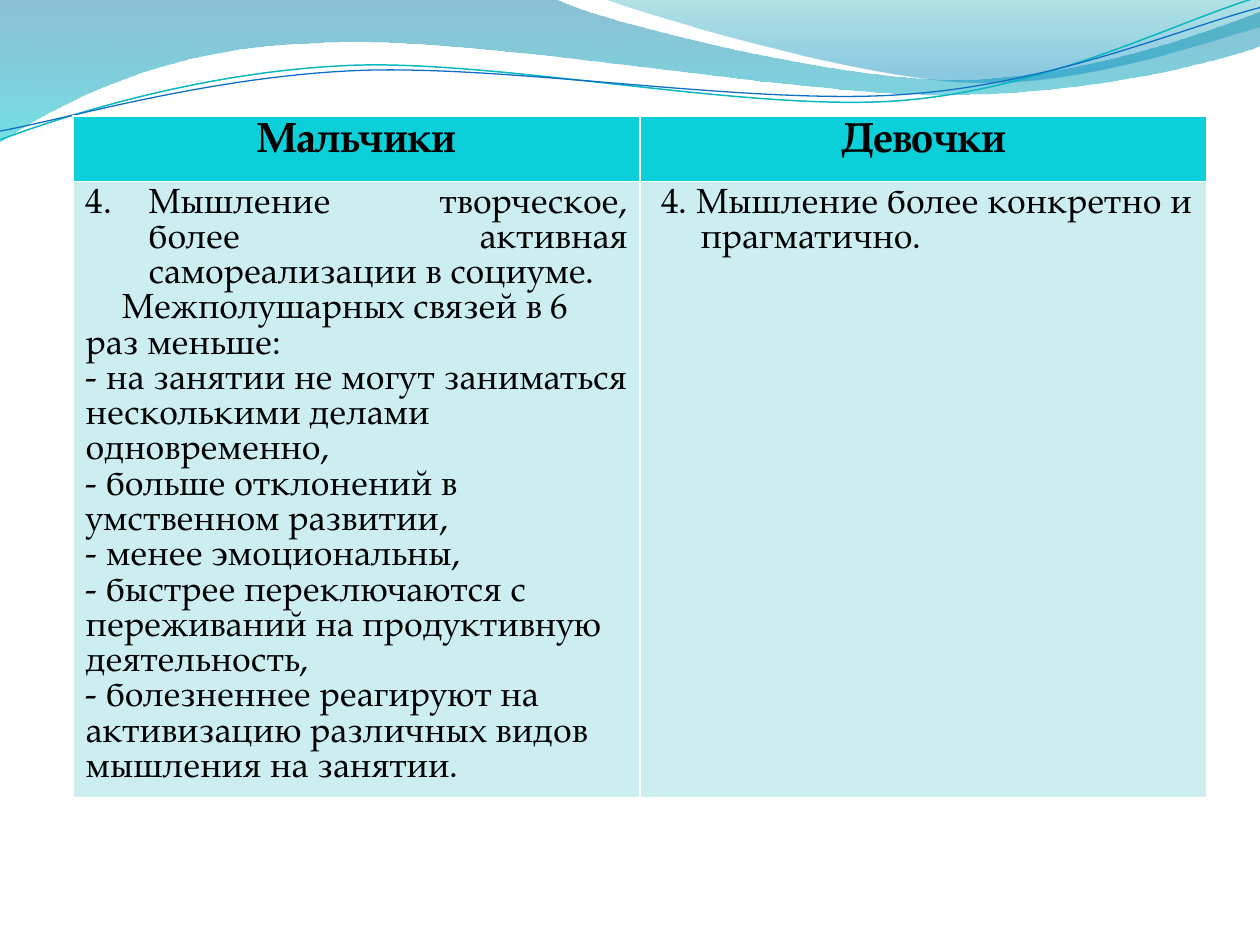
from math import cos, radians, sin

from lxml.etree import SubElement
from pptx import Presentation
from pptx.dml.color import RGBColor
from pptx.enum.text import PP_ALIGN
from pptx.oxml.ns import qn
from pptx.util import Inches, Pt

FONT = "TeX Gyre Pagella"
COLORS = {
    "header": "0BD0D9", "body": "CCEEF1", "text": "000000",
    "blue": "0074A1", "cyan": "00C6CF", "teal": "00A1A9", "azure": "008BBF",
    "upper line": "0AB8BF", "lower line": "0F6FC6",
}
HEADERS = ["Мальчики", "Девочки"]
BOYS = [
    "Мышление творческое, более активная самореализации в социуме.",
    "Межполушарных связей в 6 раз меньше:",
    "- на занятии не могут заниматься несколькими делами одновременно,",
    "- больше отклонений в умственном развитии,",
    "- менее эмоциональны,",
    "- быстрее переключаются с переживаний на продуктивную деятельность,",
    "- болезненнее реагируют на активизацию различных видов мышления на занятии.",
]
GIRLS = [" 4. Мышление более конкретно и прагматично."]
BOYS_INDENTS = {0: (0.5, -0.5), 1: (0, 0.29)}
GIRLS_INDENTS = {0: (0.38, -0.38)}
COLUMN_WIDTH = 4.5
ROW_HEIGHTS = [0.52, 4.89]
TABLE_HEIGHT = 6.29
CURVE_ROTATION = 357.3

WAVES = [
    ((-0.01, -0.01, 10.02, 1.14),
     [(0, 0), (4.4, -0.01), (4.76, 0.17, 6.64, 0.63, 7.58, 0.63),
      (8.53, 0.63, 9.58, 0.26, 10, 0.09), (10.01, 0.36),
      (9.83, 0.44, 8.7, 0.76, 7.46, 0.75), (6.22, 0.75, 3.82, 0.28, 2.57, 0.34),
      (1.29, 0.36, 0.46, 0.83, -0.01, 1.13), (0, 0)],
     [(0, "blue", 45), (1, "cyan", 55)]),
    ((4.79, -0.01, 5.21, 0.7),
     [(4.79, -0.01), (5.09, 0.11, 6.82, 0.62, 7.69, 0.65),
      (8.56, 0.69, 9.61, 0.32, 10, 0.21), (10, 0), (4.79, -0.01)],
     [(0, "teal", 30), (0.8, "azure", 45)]),
]
CURVES = [
    ((-0.02, 0.22, 10.02, 0.71),
     [(0, 1.11), (0.48, 0.93, 1.58, 0.57, 2.77, 0.52),
      (3.95, 0.47, 5.93, 0.89, 7.13, 0.8), (8.33, 0.71, 9.38, 0.15, 9.98, -0.02)],
     "upper line", 0.85),
    ((-0.02, 0.3, 10.03, 0.58),
     [(0, 1.04), (0.47, 0.96, 1.64, 0.61, 2.83, 0.56),
      (4.03, 0.51, 5.97, 0.84, 7.17, 0.75), (8.36, 0.67, 9.41, 0.21, 10, 0.06)],
     "lower line", 0.75),
]


def color(name):
    return RGBColor.from_string(COLORS[name])


def add_outline(slide, frame, segments, close, rotation=0):
    """Add a freeform of straight and cubic segments given in slide inches."""
    left, top, width, height = frame
    right, bottom = left + width, top + height
    corners = [(right, top), (right, bottom), (left, bottom)]
    builder = slide.shapes.build_freeform(Inches(left), Inches(top), scale=1.0)
    builder.add_line_segments([(Inches(x), Inches(y)) for x, y in corners], close=close)
    shape = builder.convert_to_shape()
    shape.shadow.inherit = False
    shape.rotation = rotation
    outline = next(shape.element.iter(qn("a:path")))
    for child in list(outline):
        outline.remove(child)
    angle = radians(-rotation)
    for index, segment in enumerate(segments):
        tag = "a:moveTo" if index == 0 else "a:lnTo" if len(segment) == 2 else "a:cubicBezTo"
        command = SubElement(outline, qn(tag))
        for x, y in zip(segment[::2], segment[1::2]):
            across, down = x - left - width / 2, y - top - height / 2
            local_x = across * cos(angle) - down * sin(angle) + width / 2
            local_y = across * sin(angle) + down * cos(angle) + height / 2
            SubElement(command, qn("a:pt"), x=str(Inches(local_x)), y=str(Inches(local_y)))
    if close:
        SubElement(outline, qn("a:close"))
    return shape


def add_wave(slide, frame, segments, stops):
    shape = add_outline(slide, frame, segments, True)
    shape.line.fill.background()
    shape.fill.gradient()
    shape.fill.gradient_angle = 270
    for stop, (position, name, opacity) in zip(shape.fill.gradient_stops, stops):
        stop.position = position
        stop.color.rgb = color(name)
    fills = shape.element.spPr.iter(qn("a:srgbClr"))
    for element, (position, name, opacity) in zip(fills, stops):
        SubElement(element, qn("a:alpha"), val=str(opacity * 1000))


def add_curve(slide, frame, segments, name, width):
    shape = add_outline(slide, frame, segments, False, CURVE_ROTATION)
    shape.fill.background()
    shape.line.color.rgb = color(name)
    shape.line.width = Pt(width)


def write_cell(cell, fill, texts, size, bold, alignment, indents):
    cell.fill.solid()
    cell.fill.fore_color.rgb = color(fill)
    frame = cell.text_frame
    for index, text in enumerate(texts):
        paragraph = frame.paragraphs[0] if index == 0 else frame.add_paragraph()
        paragraph.alignment = alignment
        run = paragraph.add_run()
        run.text = text
        run.font.name = FONT
        run.font.size = Pt(size)
        run.font.bold = bold
        run.font.color.rgb = color("text")
        margin, indent = indents.get(index, (0, 0))
        properties = paragraph._p.get_or_add_pPr()
        properties.set("marL", str(Inches(margin)))
        properties.set("indent", str(Inches(indent)))


def add_comparison(slide):
    shape = slide.shapes.add_table(
        2, 2, Inches(0.58), Inches(0.92), Inches(2 * COLUMN_WIDTH), Inches(TABLE_HEIGHT))
    table = shape.table
    for row, height in zip(table.rows, ROW_HEIGHTS):
        row.height = Inches(height)
    bodies = [(BOYS, BOYS_INDENTS), (GIRLS, GIRLS_INDENTS)]
    for column, (header, (texts, indents)) in enumerate(zip(HEADERS, bodies)):
        table.columns[column].width = Inches(COLUMN_WIDTH)
        write_cell(table.cell(0, column), "header", [header], 24, True, PP_ALIGN.CENTER, {})
        write_cell(table.cell(1, column), "body", texts, 20, False, PP_ALIGN.LEFT, indents)
    shape.height = Inches(TABLE_HEIGHT)
    numbered = table.cell(1, 0).text_frame.paragraphs[0]
    numbered.alignment = PP_ALIGN.JUSTIFY
    SubElement(numbered._p.get_or_add_pPr(), qn("a:buAutoNum"), type="arabicPeriod", startAt="4")


def main():
    presentation = Presentation()
    presentation.slide_width, presentation.slide_height = Inches(10), Inches(7.5)
    slide = presentation.slides.add_slide(presentation.slide_layouts[6])
    for wave in WAVES:
        add_wave(slide, *wave)
    for curve in CURVES:
        add_curve(slide, *curve)
    add_comparison(slide)
    presentation.save("out.pptx")


if __name__ == "__main__":
    main()
